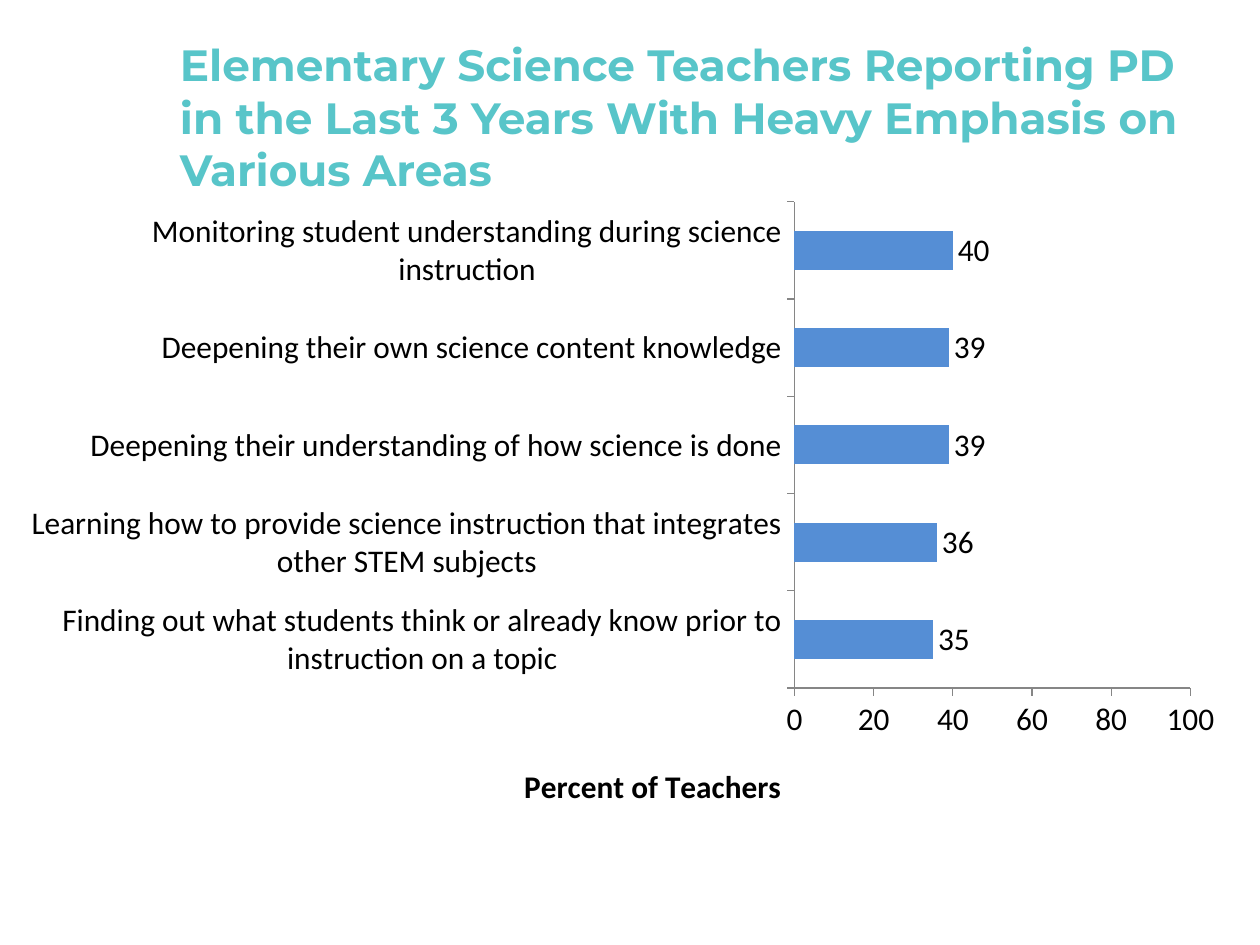
from typing import NamedTuple

from lxml import etree
from pptx import Presentation
from pptx.chart.data import CategoryChartData
from pptx.dml.color import RGBColor
from pptx.enum.chart import XL_CHART_TYPE, XL_LABEL_POSITION, XL_TICK_MARK
from pptx.enum.text import MSO_ANCHOR
from pptx.oxml.ns import qn
from pptx.util import Inches, Pt

BAR_CLUSTERED = XL_CHART_TYPE.BAR_CLUSTERED
OUTSIDE_END = XL_LABEL_POSITION.OUTSIDE_END
TICK_OUTSIDE = XL_TICK_MARK.OUTSIDE
MIDDLE = MSO_ANCHOR.MIDDLE

COLORS = {"title": "58C5C9", "text": "000000", "bar": "558ED5", "axis": "868686"}


class Area(NamedTuple):
    name: str
    percent: int


AREAS = [
    Area("Finding out what students think or already know prior to instruction on a topic", 35),
    Area("Learning how to provide science instruction that integrates other STEM subjects", 36),
    Area("Deepening their understanding of how science is done", 39),
    Area("Deepening their own science content knowledge", 39),
    Area("Monitoring student understanding during science instruction", 40),
]


def color(name: str) -> RGBColor:
    return RGBColor.from_string(COLORS[name])


def style_font(font, size: float, family: str, color_name: str, bold: bool = False) -> None:
    font.size = Pt(size)
    font.name = family
    font.bold = bold
    font.color.rgb = color(color_name)


def set_layout(parent, position: int, **settings) -> None:
    for old in parent.findall(qn("c:layout")):
        parent.remove(old)
    layout = etree.Element(qn("c:layout"))
    manual = etree.SubElement(layout, qn("c:manualLayout"))
    for tag, value in settings.items():
        etree.SubElement(manual, qn(f"c:{tag}")).set("val", str(value))
    parent.insert(position, layout)


def style_axis(axis) -> None:
    axis.has_major_gridlines = False
    axis.major_tick_mark = TICK_OUTSIDE
    axis.format.line.color.rgb = color("axis")
    axis.format.line.width = Pt(0.75)
    style_font(axis.tick_labels.font, 18, "Calibri", "text")


def add_percent_chart(slide) -> None:
    data = CategoryChartData(number_format="General")
    data.categories = [area.name for area in AREAS]
    data.add_series("Series 1", [area.percent for area in AREAS])
    frame = slide.shapes.add_chart(
        BAR_CLUSTERED, Inches(0.25), Inches(1.5), Inches(9.58), Inches(5.08), data
    )
    chart = frame.chart
    chart.has_title = False
    chart.has_legend = False
    style_font(chart.font, 18, "Calibri", "text")

    style_axis(chart.category_axis)
    percent_axis = chart.value_axis
    style_axis(percent_axis)
    percent_axis.minimum_scale = 0
    percent_axis.maximum_scale = 100
    percent_axis.major_unit = 20
    para = percent_axis.axis_title.text_frame.paragraphs[0]
    para.text = "Percent of Teachers"
    style_font(para.font, 18, "Calibri", "text", bold=True)

    plot = chart.plots[0]
    plot.gap_width = 150
    plot.vary_by_categories = False
    plot.has_data_labels = True
    labels = plot.data_labels
    labels.show_value = True
    labels.position = OUTSIDE_END
    style_font(labels.font, 18, "Calibri", "text")
    bars = plot.series[0].format.fill
    bars.solid()
    bars.fore_color.rgb = color("bar")

    root = chart.element if hasattr(chart, "element") else chart._chartSpace
    set_layout(
        root.find(".//" + qn("c:plotArea")), 0,
        layoutTarget="inner", xMode="edge", yMode="edge", x=0.63, y=0.02, w=0.33, h=0.76,
    )
    set_layout(
        root.find(".//" + qn("c:valAx") + "/" + qn("c:title")), 1,
        xMode="edge", yMode="edge", x=0.4, y=0.89,
    )


def add_title(slide) -> None:
    box = slide.shapes.add_textbox(Inches(1.33), Inches(0.3), Inches(8.17), Inches(1.25))
    box.text_frame.word_wrap = True
    box.text_frame.vertical_anchor = MIDDLE
    para = box.text_frame.paragraphs[0]
    para.text = (
        "Elementary Science Teachers Reporting PD in the Last 3 Years "
        "With Heavy Emphasis on Various Areas"
    )
    style_font(para.font, 25, "Montserrat", "title", bold=True)


def main() -> None:
    deck = Presentation()
    deck.slide_width = Inches(10)
    deck.slide_height = Inches(7.5)
    slide = deck.slides.add_slide(deck.slide_layouts[6])
    add_percent_chart(slide)
    add_title(slide)
    deck.save("out.pptx")


if __name__ == "__main__":
    main()
